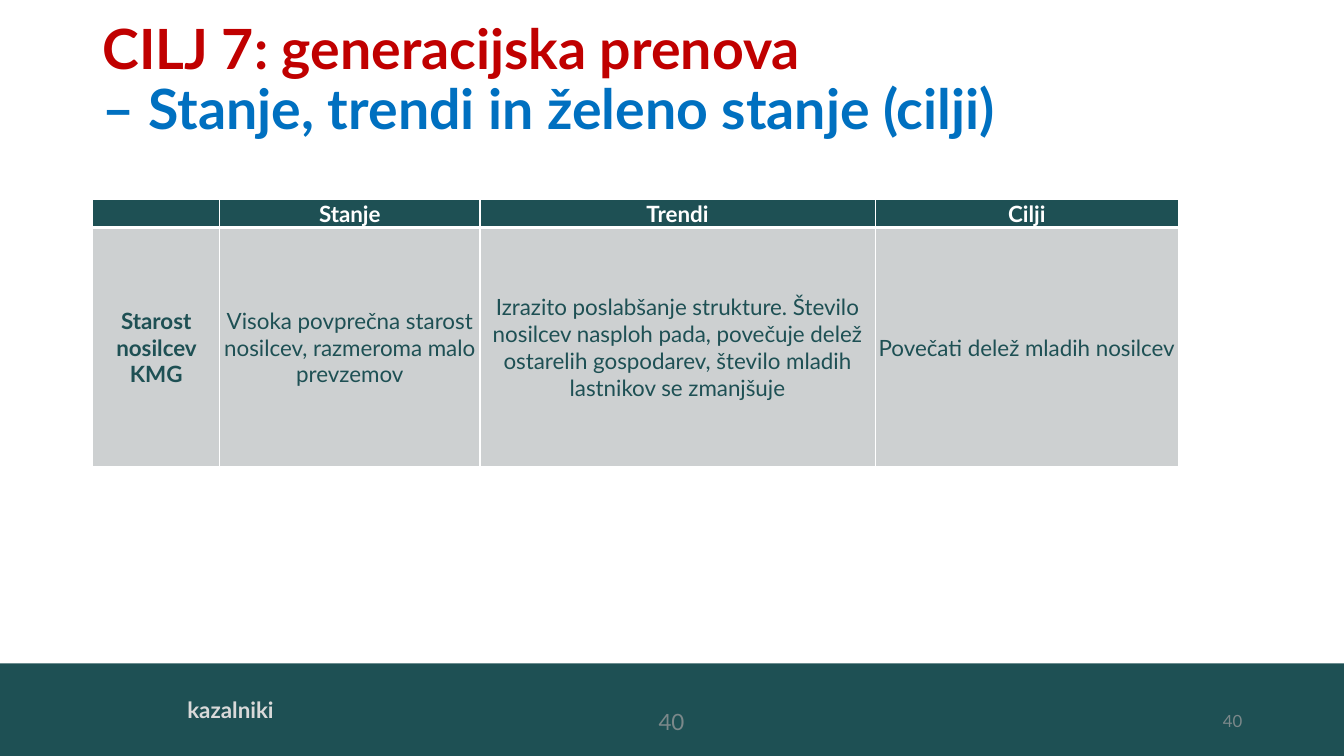
from typing import NamedTuple

from pptx import Presentation
from pptx.dml.color import RGBColor as Rgb
from pptx.enum.shapes import MSO_SHAPE as Shape
from pptx.enum.text import MSO_ANCHOR as Anchor, MSO_AUTO_SIZE as Fit, PP_ALIGN as Align
from pptx.oxml import parse_xml
from pptx.oxml.ns import nsdecls
from pptx.util import Inches, Pt

FONT = "Lato"
COLORS = {
    "teal": "1E5054", "gray": "CDD0D1", "white": "FFFFFF", "red": "C00000",
    "blue": "0070C0", "light": "D9D9D9", "muted": "7B888A",
}


class Label(NamedTuple):
    text: str
    box: tuple[float, float, float, float]
    size: float
    color: str
    align: Align
    anchor: Anchor = Anchor.MIDDLE
    bold: bool = False


LABELS = [
    Label("kazalniki", (1.76, 6.86, 9.91, 0.37), 16, "light", Align.LEFT, Anchor.TOP, True),
    Label("40", (5.16, 6.96, 3, 0.4), 16, "muted", Align.CENTER),
    Label("40", (9.42, 6.95, 3, 0.4), 12, "muted", Align.RIGHT),
]
TITLE = [
    ("CILJ 7: generacijska prenova", "red"),
    ("– Stanje, trendi in želeno stanje (cilji)", "blue"),
]
WIDTHS = [1.26, 2.58, 3.92, 3.01]
HEIGHTS = [0.26, 2.37]
ROWS = [
    ["", "Stanje", "Trendi", "Cilji"],
    [
        "Starost nosilcev KMG",
        "Visoka povprečna starost nosilcev, razmeroma malo prevzemov",
        "Izrazito poslabšanje strukture. Število nosilcev nasploh pada, povečuje delež "
        "ostarelih gospodarev, število mladih lastnikov se zmanjšuje",
        "Povečati delež mladih nosilcev",
    ],
]


def rgb(name: str) -> Rgb:
    return Rgb.from_string(COLORS[name])


def style(font, size: float, color: str, bold: bool) -> None:
    font.name, font.size, font.bold = FONT, Pt(size), bold
    font.color.rgb = rgb(color)


def add_band(slide) -> None:
    band = slide.shapes.add_shape(
        Shape.RECTANGLE, 0, Inches(6.58), Inches(13.33), Inches(0.92))
    band.shadow.inherit = False
    band.fill.solid()
    band.fill.fore_color.rgb = rgb("teal")
    band.line.fill.background()


def add_label(slide, label: Label) -> None:
    frame = slide.shapes.add_textbox(*map(Inches, label.box)).text_frame
    frame.word_wrap = True
    frame.vertical_anchor = label.anchor
    para = frame.paragraphs[0]
    para.text, para.alignment = label.text, label.align
    style(para.font, label.size, label.color, label.bold)


def set_title(slide) -> None:
    title = slide.shapes.title
    title.left, title.top = Inches(0.92), Inches(0.4)
    title.width, title.height = Inches(9.72), Inches(0.81)
    frame = title.text_frame
    frame.auto_size, frame.word_wrap = Fit.NONE, True
    frame.vertical_anchor = Anchor.MIDDLE
    para = frame.paragraphs[0]
    para.alignment, para.line_spacing = Align.LEFT, 0.9
    for i, (text, color) in enumerate(TITLE):
        if i:
            para.add_line_break()
        run = para.add_run()
        run.text = text
        style(run.font, 39.6, color, True)


def set_edges(cell, **widths: float) -> None:
    """Draw white borders; the keys are the sides L, R, T and B, in that order."""
    props = cell._tc.get_or_add_tcPr()
    for side, width in widths.items():
        props.append(parse_xml(
            f'<a:ln{side} {nsdecls("a")} w="{Pt(width)}"><a:solidFill>'
            f'<a:srgbClr val="{COLORS["white"]}"/></a:solidFill></a:ln{side}>'))


def fill_cell(cell, text: str, head: bool, first: bool) -> None:
    set_edges(cell, L=1, R=1, T=1 if head else 3, B=3 if head else 1)
    cell.fill.solid()
    cell.fill.fore_color.rgb = rgb("teal" if head else "gray")
    cell.margin_left = cell.margin_right = cell.margin_top = Inches(0.01)
    cell.margin_bottom = 0
    cell.vertical_anchor = Anchor.MIDDLE
    para = cell.text_frame.paragraphs[0]
    para.text, para.alignment = text, Align.CENTER
    style(para.font, 16, "white" if head else "teal", head or first)


def add_grid(slide) -> None:
    table = slide.shapes.add_table(
        len(ROWS), len(WIDTHS), Inches(0.92), Inches(1.98),
        Inches(sum(WIDTHS)), Inches(sum(HEIGHTS))).table
    for col, width in zip(table.columns, WIDTHS):
        col.width = Inches(width)
    for r, texts in enumerate(ROWS):
        table.rows[r].height = Inches(HEIGHTS[r])
        for c, text in enumerate(texts):
            fill_cell(table.cell(r, c), text, r == 0, c == 0)


def main() -> None:
    deck = Presentation()
    deck.slide_width, deck.slide_height = Inches(13.33), Inches(7.5)
    slide = deck.slides.add_slide(deck.slide_layouts[5])
    add_band(slide)
    for label in LABELS:
        add_label(slide, label)
    set_title(slide)
    add_grid(slide)
    deck.save("out.pptx")


if __name__ == "__main__":
    main()
